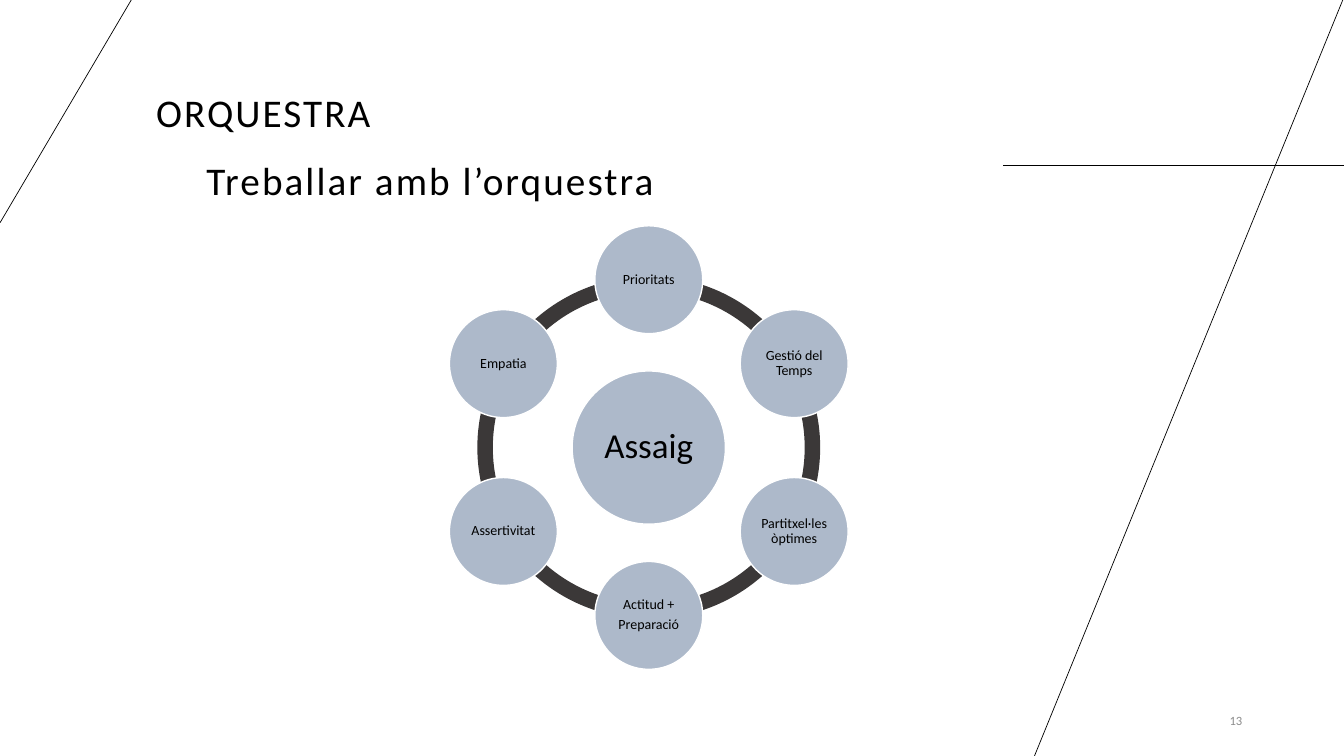
from dataclasses import dataclass
from math import cos, radians, sin

from lxml.etree import SubElement
from pptx import Presentation
from pptx.dml.color import RGBColor
from pptx.enum.shapes import MSO_CONNECTOR, MSO_SHAPE
from pptx.enum.text import MSO_ANCHOR as Anchor, PP_ALIGN as Align
from pptx.oxml.ns import qn
from pptx.util import Inches, Pt


@dataclass(frozen=True)
class Theme:
    font: str = "Calibri"
    ink: RGBColor = RGBColor(0x00, 0x00, 0x00)
    muted: RGBColor = RGBColor(0x8C, 0x8C, 0x8C)
    paper: RGBColor = RGBColor(0xFF, 0xFF, 0xFF)
    ring: RGBColor = RGBColor(0x3B, 0x38, 0x38)
    node: RGBColor = RGBColor(0xAD, 0xB9, 0xCA)
    title_size: int = 28
    hub_size: int = 25
    node_size: int = 10
    number_size: int = 9
    title_tracking: int = 150
    line_spacing: float = 0.9
    paragraph_gap: float = 0.35


@dataclass(frozen=True)
class Box:
    left: float
    top: float
    width: float
    height: float

    def emu(self):
        return [Inches(v) for v in (self.left, self.top, self.width, self.height)]

    def point(self, column, row):
        """Point at the given percentages of the box."""
        return self.left + self.width * column / 100, self.top + self.height * row / 100

    def cell(self, column, row, columns, rows):
        return Box(*self.point(column, row),
                   self.width * columns / 100, self.height * rows / 100)


THEME = Theme()
PAGE = Box(0, 0, 13.33, 7.5)

# Columns and rows of a 100 by 100 grid over the slide
RULES = [
    ((74.64, 21.87), (100, 21.87)),
    ((100, -0.4), (76.97, 100)),
    ((0, 29.47), (9.9, -0.4)),
]
HEADINGS = [
    ("ORQUESTRA", (10.88, 11.6, 59.79, 7.07)),
    ("Treballar amb l’orquestra", (14.63, 20.53, 59.79, 7.07)),
]
NUMBER_CELL = (85.07, 92.67, 8.1, 5.33)
DIAGRAM_CELL = (33.46, 29.87, 29.63, 58.67)

# Diameters as percentages of the diagram's height
NODE, HUB, RING = 24.32, 34.55, 77.27
RING_THICKNESS = 0.045
ANGLE_UNIT = 0.6  # one degree as an adjustment value

# Each node: paragraphs, each made of lines; clockwise from the top
NODES = [
    [["Prioritats"]],
    [["Gestió del", "Temps"]],
    [["Partitxel·les", "òptimes"]],
    [["Actitud +"], ["Preparació"]],
    [["Assertivitat"]],
    [["Empatia"]],
]


def add_run(paragraph, text, size, color=THEME.ink):
    run = paragraph.add_run()
    run.text = text
    run.font.name, run.font.size = THEME.font, Pt(size)
    run.font.color.rgb = color
    return run


def add_text_box(slide, box, anchor):
    frame = slide.shapes.add_textbox(*box.emu()).text_frame
    frame.word_wrap = True
    frame.vertical_anchor = anchor
    return frame.paragraphs[0]


def add_rules(slide, box):
    """Thin decorative lines around the slide."""
    for start, end in RULES:
        ends = [Inches(v) for v in (*box.point(*start), *box.point(*end))]
        line = slide.shapes.add_connector(MSO_CONNECTOR.STRAIGHT, *ends)
        line.line.color.rgb = THEME.ink
        line.line.width = Pt(0.5)
        SubElement(line._element.spPr, qn("a:effectLst"))


def add_heading(slide, box, text):
    paragraph = add_text_box(slide, box, Anchor.BOTTOM)
    paragraph.line_spacing = THEME.line_spacing
    run = add_run(paragraph, text, THEME.title_size)
    run.font._element.set("spc", str(THEME.title_tracking))


def add_page_number(slide, box, text):
    paragraph = add_text_box(slide, box, Anchor.MIDDLE)
    paragraph.alignment = Align.RIGHT
    add_run(paragraph, text, THEME.number_size, THEME.muted)


def add_round(slide, kind, center, diameter, fill):
    x, y = center
    box = Box(x - diameter / 2, y - diameter / 2, diameter, diameter)
    shape = slide.shapes.add_shape(kind, *box.emu())
    shape.shadow.inherit = False
    shape.fill.solid()
    shape.fill.fore_color.rgb = fill
    shape.line.fill.background()
    return shape


def add_disc(slide, center, diameter, paragraphs, size, inset):
    disc = add_round(slide, MSO_SHAPE.OVAL, center, diameter, THEME.node)
    disc.line.color.rgb = THEME.paper
    disc.line.width = Pt(1)
    frame = disc.text_frame
    frame.word_wrap = True
    frame.vertical_anchor = Anchor.MIDDLE
    frame.margin_left = frame.margin_right = Inches(inset)
    frame.margin_top = frame.margin_bottom = Inches(inset)
    for index, lines in enumerate(paragraphs):
        paragraph = frame.add_paragraph() if index else frame.paragraphs[0]
        paragraph.alignment = Align.CENTER
        paragraph.line_spacing = THEME.line_spacing
        paragraph.space_after = Pt(size * THEME.paragraph_gap)
        for number, text in enumerate(lines):
            if number:
                paragraph.add_line_break()
            add_run(paragraph, text, size)


def add_cycle(slide, box, hub, nodes):
    """Hub inside a ring of arcs that join evenly spaced nodes."""
    center = box.point(50, 50)
    node, core, ring = (box.height * share / 100 for share in (NODE, HUB, RING))
    orbit = (box.height - node) / 2
    step = 360 / len(nodes)
    angles = [(270 + step * index) % 360 for index in range(len(nodes))]
    for angle in angles:
        arc = add_round(slide, MSO_SHAPE.BLOCK_ARC, center, ring, THEME.ring)
        arc.adjustments[0] = angle * ANGLE_UNIT
        arc.adjustments[1] = (angle + step) % 360 * ANGLE_UNIT
        arc.adjustments[2] = RING_THICKNESS
    add_disc(slide, center, core, [[hub]], THEME.hub_size, 0.03)
    for angle, paragraphs in zip(angles, nodes):
        turn = radians(angle)
        place = center[0] + orbit * cos(turn), center[1] + orbit * sin(turn)
        add_disc(slide, place, node, paragraphs, THEME.node_size, 0.01)


def add_cycle_slide(presentation):
    slide = presentation.slides.add_slide(presentation.slide_layouts[6])
    slide.background.fill.solid()
    slide.background.fill.fore_color.rgb = THEME.paper
    add_rules(slide, PAGE)
    add_page_number(slide, PAGE.cell(*NUMBER_CELL), "13")
    for text, cell in HEADINGS:
        add_heading(slide, PAGE.cell(*cell), text)
    add_cycle(slide, PAGE.cell(*DIAGRAM_CELL), "Assaig", NODES)


def main():
    presentation = Presentation()
    presentation.slide_width = Inches(PAGE.width)
    presentation.slide_height = Inches(PAGE.height)
    add_cycle_slide(presentation)
    presentation.save("out.pptx")


if __name__ == "__main__":
    main()
